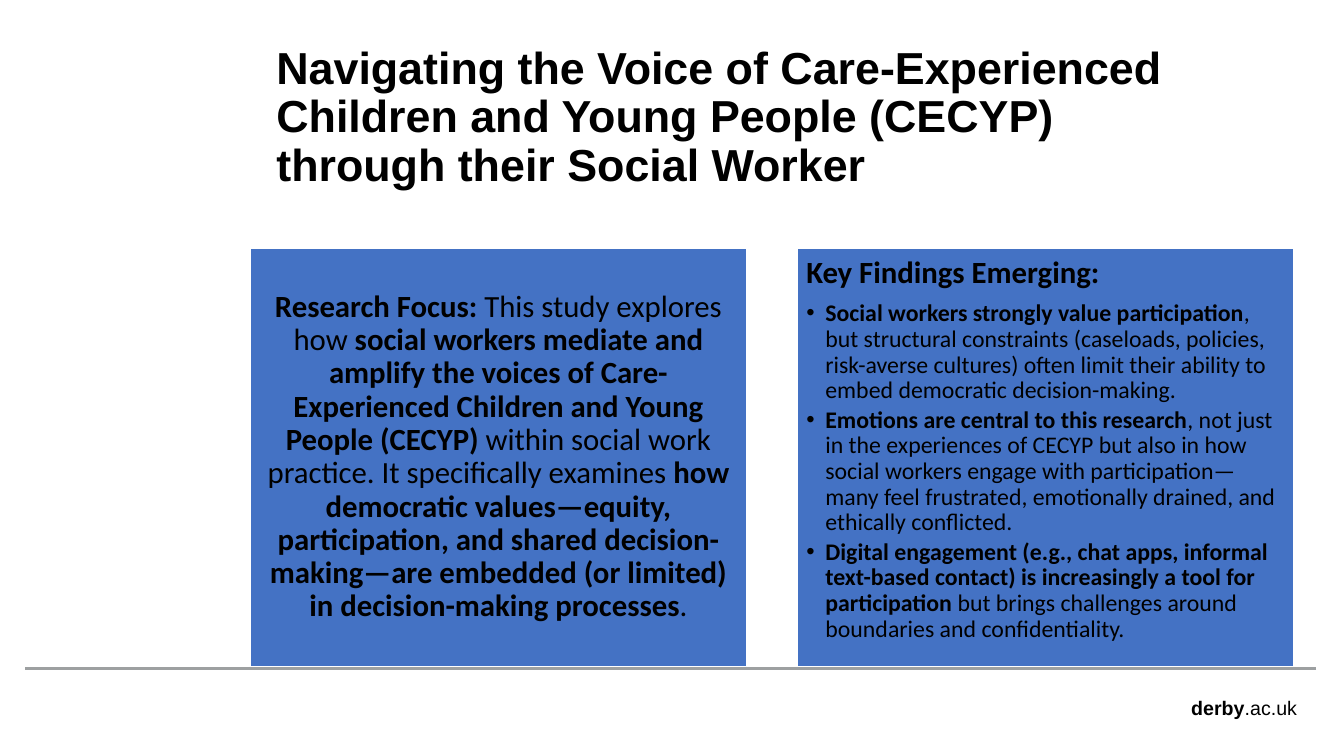
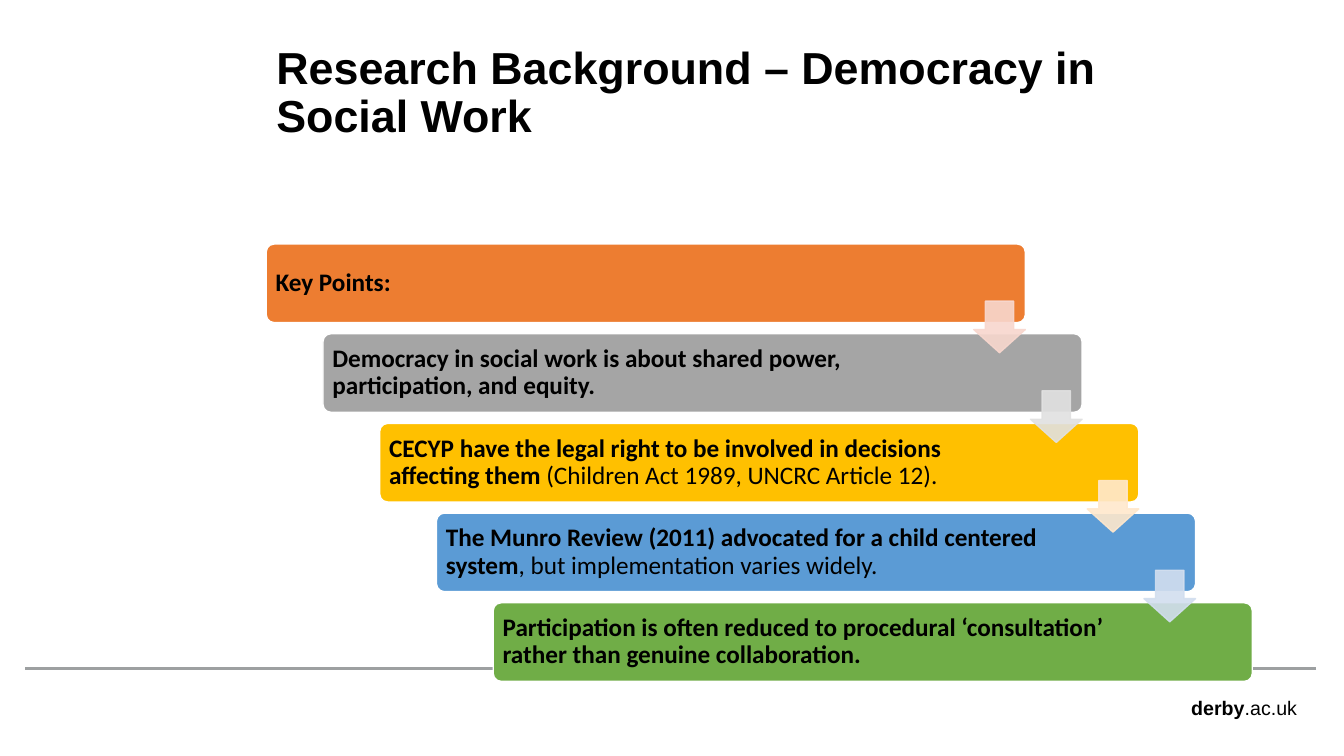
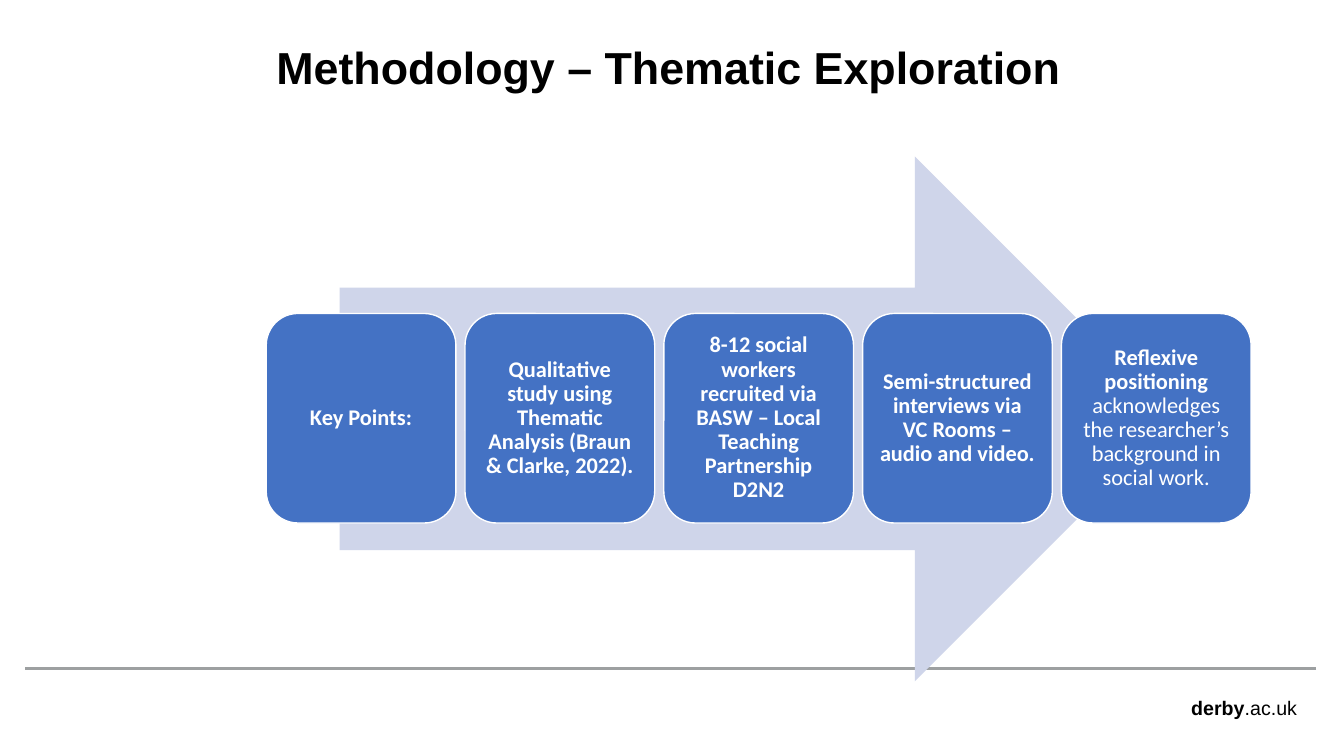
"""Three slides on the voice of care-experienced children in social work."""
from dataclasses import dataclass

from lxml.etree import SubElement as Sub
from pptx import Presentation
from pptx.dml.color import RGBColor as RGB
from pptx.enum.shapes import MSO_CONNECTOR as Link, MSO_SHAPE as Kind
from pptx.enum.text import MSO_ANCHOR as Anchor, MSO_AUTO_SIZE as Fit, PP_ALIGN as Align
from pptx.oxml.ns import qn
from pptx.util import Cm, Pt


@dataclass(frozen=True)
class Theme:
    head: str = "Arial"
    body: str = "Calibri"
    ink: str = "000000"
    white: str = "FFFFFF"
    rule: str = "9DA0A1"
    blue: str = "4472C4"
    pale: str = "CFD5EA"
    title: int = 32
    lead: int = 22
    step: int = 18
    item: int = 17
    card: int = 16
    foot: int = 14


T = Theme()
LEFT = 6.71

TITLES = [
    "Navigating the Voice of Care-Experienced Children and Young People (CECYP) through their Social Worker",
    "Research Background – Democracy in Social Work",
    "Methodology – Thematic Exploration",
]
FOOT = "*derby*.ac.uk"
FOCUS = (
    "*Research Focus: *This study explores how *social workers mediate and amplify the voices of "
    "Care-Experienced Children and Young People (CECYP)* within social work practice. It specifically "
    "examines *how democratic values—equity, participation, and shared decision-making—are embedded "
    "(or limited) in decision-making processes*."
)
FOUND = "*Key Findings Emerging:*"
ITEMS = [
    "*Social workers strongly value participation*, but structural constraints (caseloads, policies, "
    "risk-averse cultures) often limit their ability to embed democratic decision-making.",
    "*Emotions are central to this research*, not just in the experiences of CECYP but also in how social "
    "workers engage with participation—many feel frustrated, emotionally drained, and ethically conflicted.",
    "*Digital engagement (e.g., chat apps, informal text-based contact) is increasingly a tool for "
    "participation *but brings challenges around boundaries and confidentiality.",
]
STEPS = [
    ("*Key Points:*", "ED7D31", "F8D7CE"),
    ("*Democracy in social work is about shared power, participation, and equity.*", "A5A5A5", "E1E1E1"),
    ("*CECYP have the legal right to be involved in decisions affecting them* "
     "(Children Act 1989, UNCRC Article 12).", "FFC000", "FFE8CC"),
    ("*The Munro Review (2011) advocated for a child centered system*, but implementation varies widely.",
     "5B9BD5", "D2DEEF"),
    ("*Participation is often reduced to procedural ‘consultation’ rather than genuine collaboration.*",
     "70AD47", None),
]
CARDS = [
    "*Key Points:*",
    "*Qualitative study using Thematic Analysis (Braun & Clarke, 2022).*",
    "*8-12 social workers recruited via BASW – Local Teaching Partnership D2N2*",
    "*Semi-structured interviews via VC Rooms – audio and video.*",
    "*Reflexive positioning* acknowledges the researcher’s background in social work.",
]


def write(para, text, size, color=T.ink, face=T.body, align=Align.LEFT, line=0.9, after=0.35, dot=None):
    props = para._p.get_or_add_pPr()
    hang = Cm(0.48) if dot else 0
    props.set("marL", str(hang))
    props.set("indent", str(-hang))
    if dot:
        Sub(props, qn("a:buFont")).set("typeface", "Arial")
        Sub(props, qn("a:buChar")).set("char", dot)
    else:
        Sub(props, qn("a:buNone"))
    para.alignment, para.line_spacing = align, line
    para.space_before, para.space_after = Pt(0), Pt(round(size * after, 1))
    font = para.font
    font.name, font.size, font.color.rgb = face, Pt(size), RGB.from_string(color)
    for at, part in enumerate(text.split("*")):
        if part:
            run = para.add_run()
            run.text, run.font.bold = part, at % 2 == 1


def frame(shape, anchor, pad=None, right=None):
    text = shape.text_frame
    text.word_wrap, text.auto_size, text.vertical_anchor = True, Fit.NONE, anchor
    if pad:
        text.margin_left = text.margin_top = text.margin_bottom = Cm(pad)
        text.margin_right = Cm(right or pad)
    return text.paragraphs[0]


def place(shape, left, top, width, height):
    shape.left, shape.top, shape.width, shape.height = Cm(left), Cm(top), Cm(width), Cm(height)


def paint(shape, fill, edge=T.white):
    shape.fill.solid()
    shape.fill.fore_color.rgb = RGB.from_string(fill)
    if edge:
        shape.line.color.rgb = RGB.from_string(edge)
        shape.line.width = Pt(1)
    else:
        shape.line.fill.background()


def draw(slide, kind, box, fill, edge=T.white, adj=()):
    shape = slide.shapes.add_shape(kind, *map(Cm, box))
    shape.shadow.inherit = False
    for at, value in enumerate(adj):
        shape.adjustments[at] = value
    paint(shape, fill, edge)
    return shape


def fade(shape, share):
    for color in shape.element.spPr.iter(qn("a:srgbClr")):
        Sub(color, qn("a:alpha")).set("val", str(share * 1000))


def brand(deck, slide):
    rule = slide.shapes.add_connector(Link.STRAIGHT, Cm(33.17), Cm(16.84), Cm(0.64), Cm(16.84))
    rule.line.color.rgb, rule.line.width = RGB.from_string(T.rule), Pt(2)
    Sub(rule.element.spPr, qn("a:effectLst"))
    foot = slide.shapes.add_textbox(Cm(29.77), Cm(17.4), Cm(3.33), Cm(0.86))
    write(frame(foot, Anchor.TOP), FOOT, T.foot, face=T.head, line=1, after=0)
    for shape in (rule, foot):
        deck.slide_master.shapes.element.append(shape.element)


def start(deck, layout, title):
    slide = deck.slides.add_slide(deck.slide_layouts[layout])
    head = slide.shapes.title
    place(head, LEFT, 1.02, 23.88, 1.65)
    write(frame(head, Anchor.TOP), f"*{title}*", T.title, face=T.head, after=0)
    return slide


def focus(slide):
    panels = [slide.placeholders[1], slide.placeholders[2]]
    for at, panel in enumerate(panels):
        place(panel, 6.3 + at * 13.79, 6.25, 12.52, 10.54)
        paint(panel, T.blue)
    study, finds = panels
    write(frame(study, Anchor.MIDDLE, 0.23), FOCUS, T.lead, align=Align.CENTER)
    write(frame(finds, Anchor.TOP, 0.23), FOUND, T.lead)
    for item in ITEMS:
        para = finds.text_frame.add_paragraph()
        para.level = 1
        write(para, item, T.item, after=0.15, dot="•")


def stairs(slide):
    spots = [(LEFT + at * 1.43, 6.15 + at * 2.26) for at in range(len(STEPS))]
    for (left, top), (text, fill, _) in zip(spots, STEPS):
        step = draw(slide, Kind.ROUNDED_RECTANGLE, (left, top, 19.13, 1.98), fill, adj=[0.1])
        write(frame(step, Anchor.MIDDLE, 0.18, 2.92), text, T.step)
    for (left, top), (_, _, tint) in zip(spots, STEPS):
        if tint:
            box = (left + 17.83, top + 1.44, 1.3, 1.3)
            fade(draw(slide, Kind.DOWN_ARROW, box, tint, tint, [0.55, 0.45]), 90)


def method(slide):
    draw(slide, Kind.RIGHT_ARROW, (8.56, 3.94, 21.11, 13.23), T.pale, None)
    for at, text in enumerate(CARDS):
        card = draw(slide, Kind.ROUNDED_RECTANGLE, (LEFT + at * 5.01, 7.9, 4.78, 5.28), T.blue)
        write(frame(card, Anchor.MIDDLE, 0.18), text, T.card, T.white, align=Align.CENTER)


def main():
    deck = Presentation()
    deck.slide_width, deck.slide_height = Cm(33.87), Cm(19.05)
    plan = zip(TITLES, (3, 5, 5), (focus, stairs, method))
    for title, layout, fill in plan:
        fill(start(deck, layout, title))
    brand(deck, deck.slides[0])
    deck.save("out.pptx")


if __name__ == "__main__":
    main()
